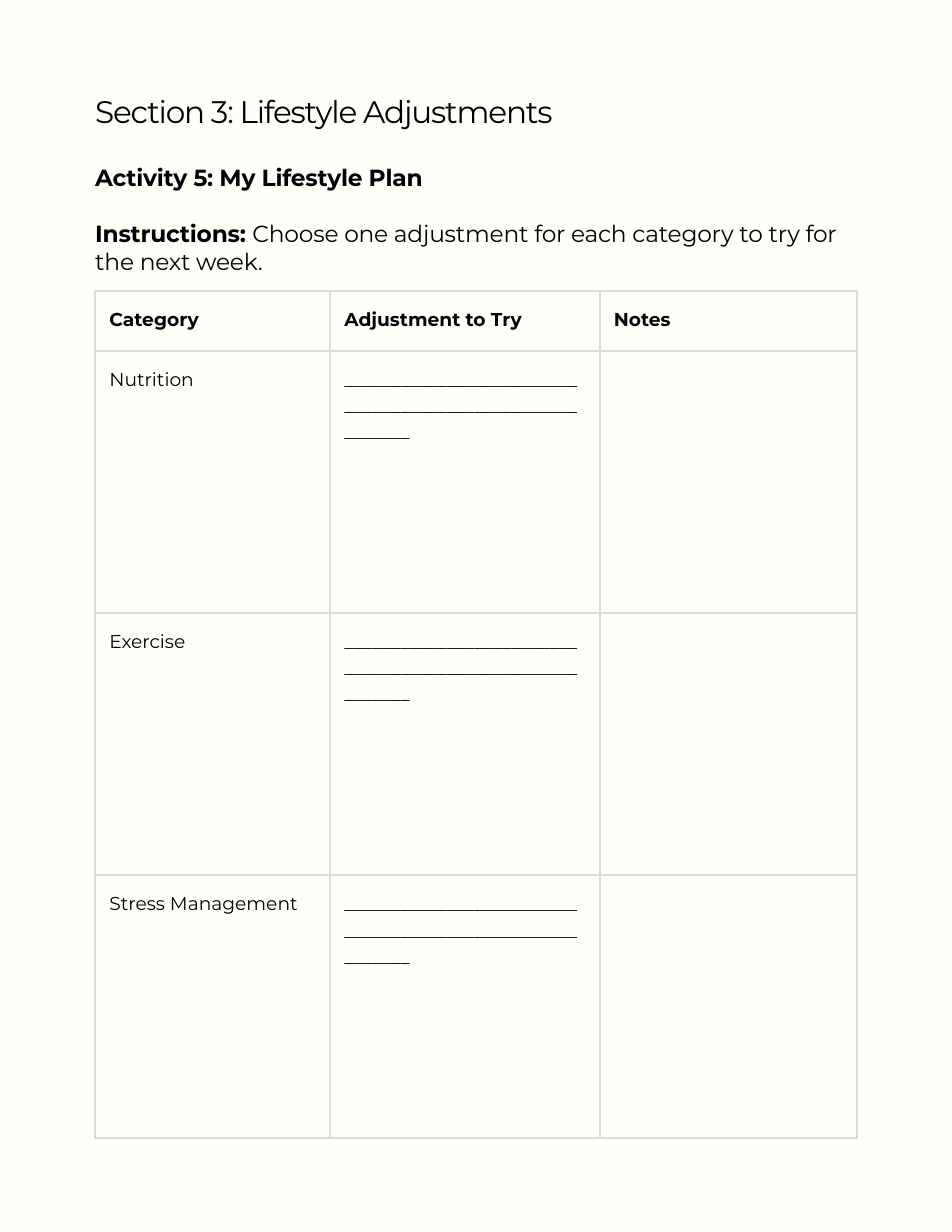
from lxml.etree import SubElement
from pptx import Presentation
from pptx.dml.color import RGBColor
from pptx.oxml.ns import qn
from pptx.util import Cm, Pt

PAPER = RGBColor(0xFF, 0xFF, 0xFC)
BLACK = RGBColor(0, 0, 0)
GRAY = RGBColor(0xDB, 0xDB, 0xDB)
FONT = "Montserrat"
LEFT, WIDTH = 2.16, 17.27

BLOCKS = [
    {"top": 2.31, "high": 0.69, "size": 20, "track": -80,
     "lines": [[("Section 3: Lifestyle Adjustments", False)]]},
    {"top": 3.71, "high": 2.36, "size": 15, "track": -14,
     "lines": [
         [("Activity 5: My Lifestyle Plan", True)],
         [("Instructions: ", True),
          ("Choose one adjustment for each category to try for the next week.", False)],
     ]},
]
BLANK = "_" * 57
HEAD = ["Category", "Adjustment to Try", "Notes"]
TOPICS = ["Nutrition", "Exercise", "Stress Management"]
ROWS = [HEAD] + [[topic, BLANK, ""] for topic in TOPICS]
COLS = [5.33, 6.11, 5.83]
TALL = [1.35] + [5.95] * len(TOPICS)
GRID_TOP = 6.6


def assign(item, values):
    for name, value in values.items():
        setattr(item, name, value)


def write(para, parts, size, lead, track=0):
    para.line_spacing = Pt(lead)
    for text, bold in parts:
        run = para.add_run()
        run.text = text
        assign(run.font, {"name": FONT, "size": Pt(size), "bold": bold})
        run.font.color.rgb = BLACK
        if track:
            run.font._element.set("spc", str(track))


def border(cell):
    props = cell._tc.get_or_add_tcPr()
    for side in ("lnL", "lnR", "lnT", "lnB"):
        line = SubElement(props, qn("a:" + side), w=str(Pt(1.5)))
        fill = SubElement(line, qn("a:solidFill"))
        SubElement(fill, qn("a:srgbClr"), val=str(GRAY))


def add_block(slide, block):
    box = slide.shapes.add_textbox(
        Cm(LEFT), Cm(block["top"]), Cm(WIDTH), Cm(block["high"]))
    frame = box.text_frame
    assign(frame, {"word_wrap": True, "margin_left": 0, "margin_right": 0,
                   "margin_top": 0, "margin_bottom": 0})
    for i, parts in enumerate(block["lines"]):
        para = frame.add_paragraph() if i else frame.paragraphs[0]
        para.space_before = Pt(18 if i else 0)
        write(para, parts, block["size"], 18, block["track"])


def add_grid(slide):
    grid = slide.shapes.add_table(
        len(ROWS), len(COLS), Cm(LEFT), Cm(GRID_TOP),
        Cm(WIDTH), Cm(sum(TALL))).table
    assign(grid, {"first_row": False, "horz_banding": False})
    for col, wide in zip(grid.columns, COLS):
        col.width = Cm(wide)
    pad = Cm(0.32)
    for r, row in enumerate(ROWS):
        grid.rows[r].height = Cm(TALL[r])
        for c, text in enumerate(row):
            cell = grid.cell(r, c)
            assign(cell, {"margin_left": pad, "margin_right": pad,
                          "margin_top": pad, "margin_bottom": pad})
            border(cell)
            cell.fill.background()
            if text:
                write(cell.text_frame.paragraphs[0], [(text, r == 0)], 12, 16.8)


def main():
    deck = Presentation()
    assign(deck, {"slide_width": Cm(21.59), "slide_height": Cm(27.94)})
    slide = deck.slides.add_slide(deck.slide_layouts[6])
    fill = slide.background.fill
    fill.solid()
    fill.fore_color.rgb = PAPER
    for block in BLOCKS:
        add_block(slide, block)
    add_grid(slide)
    deck.save("out.pptx")


if __name__ == "__main__":
    main()
